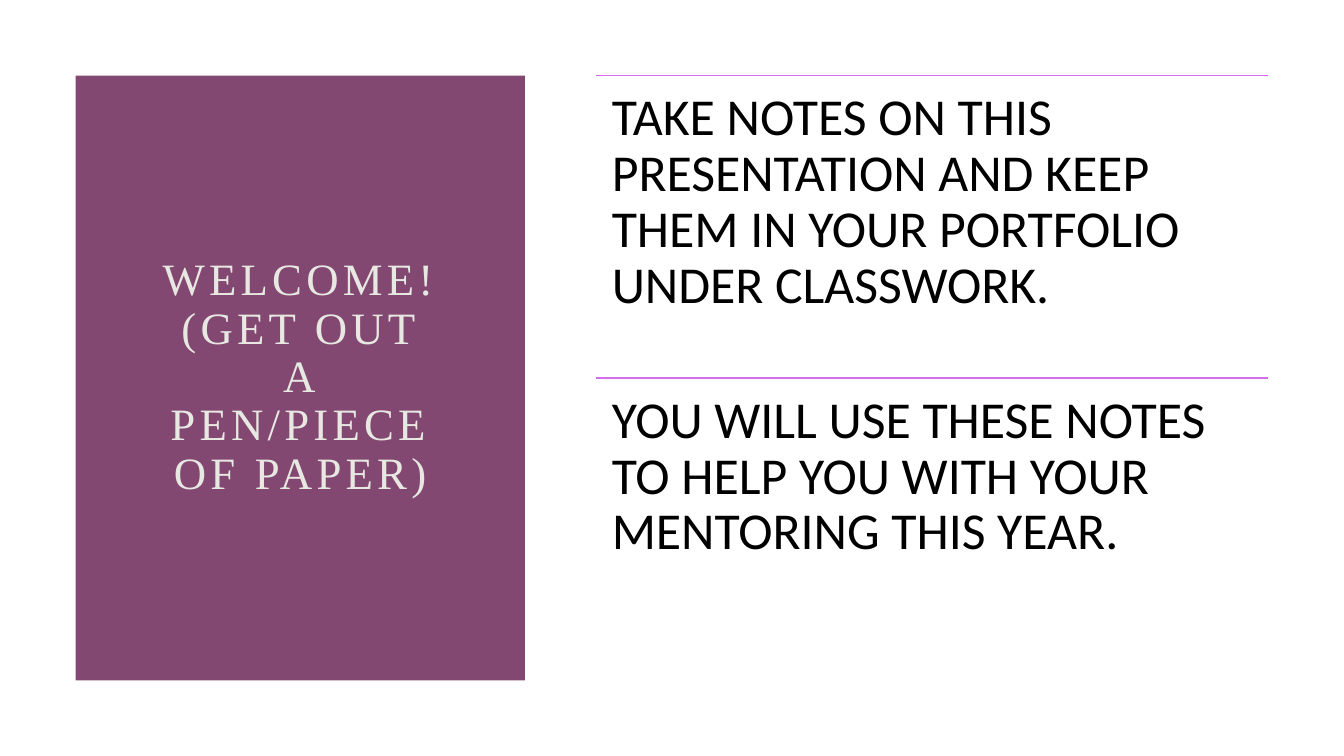
from pptx import Presentation
from pptx.dml.color import RGBColor
from pptx.enum.shapes import MSO_CONNECTOR, MSO_SHAPE
from pptx.enum.text import MSO_ANCHOR, PP_ALIGN
from pptx.oxml.ns import qn
from pptx.util import Pt
from lxml import etree

TITLE = "WELCOME!\n(GET OUT A PEN/PIECE OF PAPER)"
NOTES = [
    "TAKE NOTES ON THIS PRESENTATION AND KEEP THEM IN YOUR PORTFOLIO UNDER CLASSWORK.",
    "YOU WILL USE THESE NOTES TO HELP YOU WITH YOUR MENTORING THIS YEAR.",
]

PLUM = RGBColor(0x83, 0x48, 0x71)
ORCHID = RGBColor(0xD4, 0x6E, 0xEE)
CREAM = RGBColor(0xE8, 0xE8, 0xE2)
BLACK = RGBColor(0, 0, 0)
RECTANGLE = MSO_SHAPE.RECTANGLE
STRAIGHT = MSO_CONNECTOR.STRAIGHT
TOP, MIDDLE = MSO_ANCHOR.TOP, MSO_ANCHOR.MIDDLE
LEFT, CENTER = PP_ALIGN.LEFT, PP_ALIGN.CENTER

MARGIN = 54
PANEL_WIDTH, PANEL_HEIGHT = 321, 432
NOTES_LEFT, NOTES_WIDTH = 426, 480
NOTE_HEIGHT = PANEL_HEIGHT / len(NOTES)


def add_text(page, text, frame, inset, anchor, align, font, size, color):
    box = page.shapes.add_textbox(*map(Pt, frame))
    body = box.text_frame
    body.word_wrap = True
    body.vertical_anchor = anchor
    body.margin_left = body.margin_right = Pt(inset)
    body.margin_top = body.margin_bottom = Pt(inset)
    para = body.paragraphs[0]
    para.text = text
    para.alignment = align
    para.line_spacing = 0.9
    for span in para.runs:
        span.font.name = font
        span.font.size = Pt(size)
        span.font.color.rgb = color
    return para


def add_rule(page, left, top, width):
    rule = page.shapes.add_connector(STRAIGHT, Pt(left), Pt(top), Pt(left + width), Pt(top))
    rule.line.color.rgb = ORCHID
    rule.line.width = Pt(1)
    etree.SubElement(rule._element.spPr, qn("a:effectLst"))


def main():
    deck = Presentation()
    deck.slide_width, deck.slide_height = Pt(960), Pt(540)
    page = deck.slides.add_slide(deck.slide_layouts[6])

    panel = page.shapes.add_shape(
        RECTANGLE, Pt(MARGIN), Pt(MARGIN), Pt(PANEL_WIDTH), Pt(PANEL_HEIGHT))
    panel.shadow.inherit = False
    panel.fill.solid()
    panel.fill.fore_color.rgb = PLUM
    panel.line.fill.background()

    title_frame = (2 * MARGIN, 2 * MARGIN,
                   PANEL_WIDTH - 2 * MARGIN, PANEL_HEIGHT - 2 * MARGIN)
    title = add_text(page, TITLE, title_frame, 7.2, MIDDLE, CENTER,
                     "Times New Roman", 32, CREAM)
    for span in title.runs:
        span.font._element.set("spc", "300")

    for index, note in enumerate(NOTES):
        top = MARGIN + index * NOTE_HEIGHT
        add_rule(page, NOTES_LEFT, top, NOTES_WIDTH)
        add_text(page, note, (NOTES_LEFT, top, NOTES_WIDTH, NOTE_HEIGHT), 11,
                 TOP, LEFT, "Calibri", 37, BLACK)

    deck.save("out.pptx")


if __name__ == "__main__":
    main()
